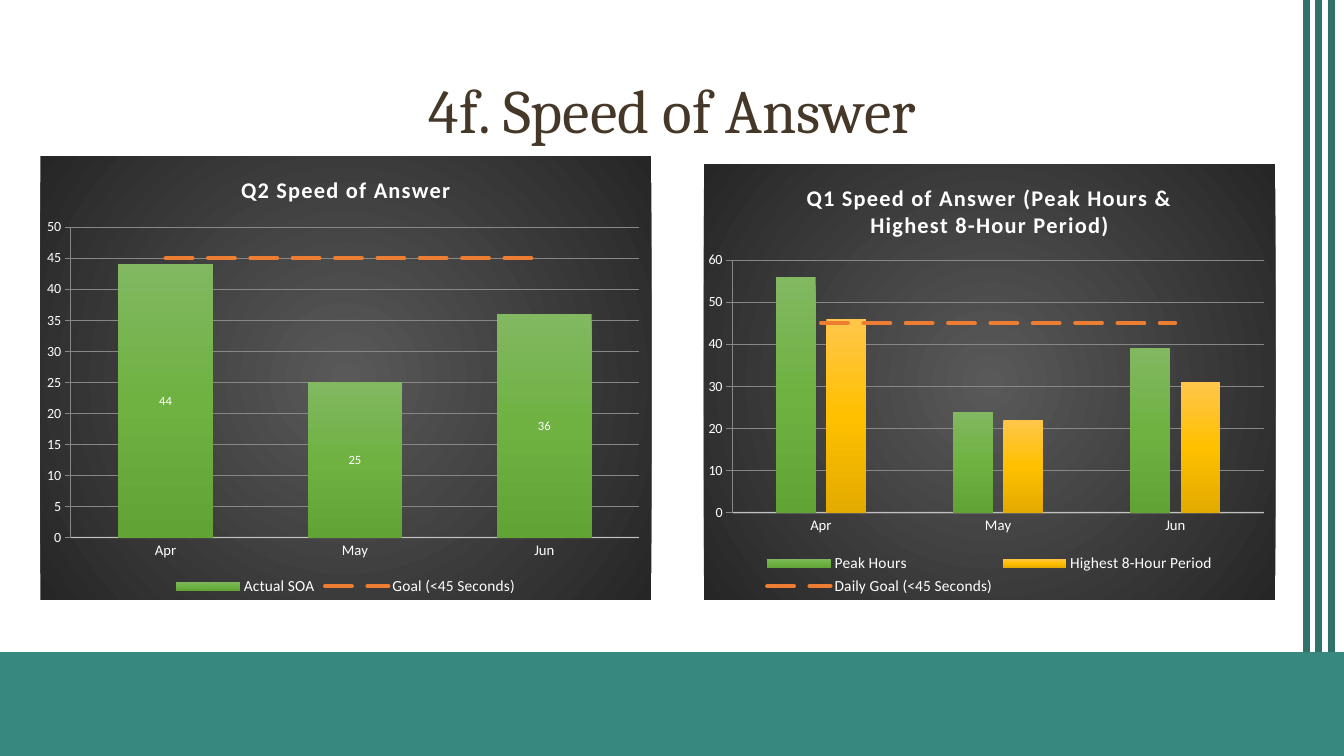
import pptx
import pptx.chart.data
import pptx.dml.color
import pptx.enum.chart
import pptx.enum.dml
import pptx.enum.shapes
import pptx.enum.text
import pptx.oxml
import pptx.oxml.ns
import pptx.util

Inches, Pt, qn = pptx.util.Inches, pptx.util.Pt, pptx.oxml.ns.qn
COLOURS = {"band": "37887F", "stripe": "30716A", "title": "453828", "text": "FFFFFF",
           "axis": "F2F2F2", "goal": "ED7D31"}
GRADIENTS = {"panel": ["595959", "262626"],
             "green": ["81B861", "6FB242", "62A336"],
             "yellow": ["FFC64B", "FFC000", "E3AB00"]}
NS = pptx.oxml.ns.nsdecls("c", "a")
GOAL_AXES = f"""<c:axes {NS}>
<c:catAx><c:axId val="301"/><c:scaling><c:orientation val="minMax"/></c:scaling>
<c:delete val="1"/><c:axPos val="b"/><c:crossAx val="302"/><c:crosses val="autoZero"/></c:catAx>
<c:valAx><c:axId val="302"/><c:scaling><c:orientation val="minMax"/><c:max val="50"/><c:min val="0"/>
</c:scaling><c:delete val="1"/><c:axPos val="r"/><c:crossAx val="301"/><c:crosses val="max"/></c:valAx>
</c:axes>"""


def rgb(name):
    return pptx.dml.color.RGBColor.from_string(COLOURS[name])


def set_all(target, values):
    for key, value in values.items():
        setattr(target, key, value)


def gradient(name, direction):
    colours = GRADIENTS[name]
    stops = "".join(
        f'<a:gs pos="{100000 * i // (len(colours) - 1)}"><a:srgbClr val="{colour}"/></a:gs>'
        for i, colour in enumerate(colours))
    return f"<a:gradFill {NS}><a:gsLst>{stops}</a:gsLst>{direction}</a:gradFill>"


class SpeedSlide:
    linear = '<a:lin ang="5400000" scaled="0"/>'
    radial = ('<a:path path="circle"><a:fillToRect l="50000" t="50000" r="50000" b="50000"/>'
              '</a:path>')

    def __init__(self, deck):
        self.slide = deck.slides.add_slide(deck.slide_layouts[5])

    def font(self, font, size, colour="text", face="Calibri", bold=False):
        set_all(font, {"size": Pt(size), "name": face, "bold": bold})
        font.color.rgb = rgb(colour)

    def line(self, line, colour, width, alpha=None):
        line.color.rgb = rgb(colour)
        line.width = Pt(width)
        if alpha:
            tint = line._ln.find(".//" + qn("a:srgbClr"))
            tint.append(pptx.oxml.parse_xml(f'<a:alpha {NS} val="{alpha * 1000}"/>'))

    def title(self, words, box):
        heading = self.slide.shapes.title
        set_all(heading, dict(zip(("left", "top", "width", "height"), map(Inches, box))))
        frame = heading.text_frame
        frame.text = words
        set_all(frame, {"vertical_anchor": pptx.enum.text.MSO_ANCHOR.MIDDLE, "word_wrap": True})
        set_all(frame.paragraphs[0], {"alignment": pptx.enum.text.PP_ALIGN.CENTER,
                                      "line_spacing": 0.9})
        self.font(frame.paragraphs[0].runs[0].font, 44, "title", "Cambria")

    def band(self, box):
        band = self.slide.shapes.add_shape(
            pptx.enum.shapes.MSO_SHAPE.RECTANGLE, *map(Inches, box))
        band.shadow.inherit = False
        band.fill.solid()
        band.fill.fore_color.rgb = rgb("band")
        band.line.fill.background()

    def stripe(self, x, bottom):
        stripe = self.slide.shapes.add_connector(
            pptx.enum.shapes.MSO_CONNECTOR.STRAIGHT, Inches(x), 0, Inches(x), Inches(bottom))
        self.line(stripe.line, "stripe", 5)
        stripe._element.spPr.append(pptx.oxml.parse_xml(f"<a:effectLst {NS}/>"))

    def chart(self, heading, box, plot_box, bars, goal, gap, overlap=0, labels=False):
        values = pptx.chart.data.CategoryChartData(number_format="0")
        values.categories = ["Apr", "May", "Jun"]
        for name, numbers, _ in bars:
            values.add_series(name, numbers)
        values.add_series(goal, [45] * 3)
        chart = self.slide.shapes.add_chart(
            pptx.enum.chart.XL_CHART_TYPE.COLUMN_CLUSTERED, *map(Inches, box), values).chart
        self.font(chart.font, 10)
        self.panel(chart, plot_box)
        self.goal_line(chart)
        self.axes(chart)

        # Title and legend
        chart.has_title = True
        chart.chart_title.include_in_layout = False
        caption = chart.chart_title.text_frame
        caption.text = heading
        run = caption.paragraphs[0].runs[0]
        self.font(run.font, 16, bold=True)
        run._r.get_or_add_rPr().set("spc", "100")
        chart.has_legend = True
        set_all(chart.legend, {"position": pptx.enum.chart.XL_LEGEND_POSITION.BOTTOM,
                               "include_in_layout": False})
        self.font(chart.legend.font, 11)

        # Bars
        columns = chart.plots[0]
        set_all(columns, {"gap_width": gap, "overlap": overlap, "vary_by_categories": False})
        for series, (_, _, shade) in zip(columns.series, bars):
            series._element.get_or_add_spPr().append(
                pptx.oxml.parse_xml(gradient(shade, self.linear)))
            if labels:
                set_all(series.data_labels, {
                    "show_value": True, "number_format": "0", "number_format_is_linked": False,
                    "position": pptx.enum.chart.XL_LABEL_POSITION.CENTER})
                self.font(series.data_labels.font, 9)

    def panel(self, chart, plot_box):
        space = chart._chartSpace
        space.find(qn("c:chart")).addnext(pptx.oxml.parse_xml(
            f"<c:spPr {NS}>{gradient('panel', self.radial)}<a:ln><a:noFill/></a:ln></c:spPr>"))
        area = space.find(".//" + qn("c:plotArea"))
        for old in area.findall(qn("c:layout")):
            area.remove(old)
        sizes = "".join(f'<c:{k} val="{v}"/>' for k, v in zip("xywh", plot_box))
        area.insert(0, pptx.oxml.parse_xml(
            f'<c:layout {NS}><c:manualLayout><c:layoutTarget val="inner"/><c:xMode val="edge"/>'
            f'<c:yMode val="edge"/>{sizes}</c:manualLayout></c:layout>'))

    def goal_line(self, chart):
        # The last series becomes a line on hidden second axes
        area = chart._chartSpace.find(".//" + qn("c:plotArea"))
        columns = area.find(qn("c:barChart"))
        goal = columns.findall(qn("c:ser"))[-1]
        for flag in goal.findall(qn("c:invertIfNegative")):
            goal.remove(flag)
        lines = pptx.oxml.parse_xml(
            f'<c:lineChart {NS}><c:grouping val="standard"/><c:varyColors val="0"/>'
            '<c:marker val="1"/><c:axId val="301"/><c:axId val="302"/></c:lineChart>')
        lines.insert(2, goal)
        columns.addnext(lines)
        last_axis = area.findall(qn("c:valAx"))[-1]
        for axis in reversed(list(pptx.oxml.parse_xml(GOAL_AXES))):
            last_axis.addnext(axis)
        series = chart.plots[1].series[0]
        series.smooth = False
        series.marker.style = pptx.enum.chart.XL_MARKER_STYLE.NONE
        goal_stroke = series.format.line
        self.line(goal_stroke, "goal", 2.75)
        goal_stroke.dash_style = pptx.enum.dml.MSO_LINE.LONG_DASH
        goal_stroke._ln.set("cap", "rnd")

    def axes(self, chart):
        months, seconds = chart.category_axis, chart.value_axis
        for axis in (months, seconds):
            axis.major_tick_mark = axis.minor_tick_mark = pptx.enum.chart.XL_TICK_MARK.NONE
            self.font(axis.tick_labels.font, 10.5)
        self.line(months.format.line, "axis", 1, 54)
        set_all(seconds, {"minimum_scale": 0, "maximum_scale": 50, "major_unit": 5,
                          "has_major_gridlines": True})
        set_all(seconds.tick_labels, {"number_format": "0", "number_format_is_linked": False})
        seconds.format.line.fill.background()
        self.line(seconds.major_gridlines.format.line, "goal", 0.75, 10)


def main():
    deck = pptx.Presentation()
    set_all(deck, {"slide_width": Inches(13.33), "slide_height": Inches(7.5)})
    page = SpeedSlide(deck)

    # Frame and title
    page.band((0, 6.47, 13.33, 1.03))
    for x in (12.96, 13.08, 13.21):
        page.stripe(x, 6.47)
    page.title("4f. Speed of Answer", (0.92, 0.4, 11.5, 1.45))

    # Charts
    page.chart("Q2 Speed of Answer", (0.4, 1.55, 6.06, 4.4), (0.05, 0.16, 0.93, 0.7),
               [("Actual SOA", (44, 25, 36), "green")], "Goal (<45 Seconds)",
               gap=100, labels=True)
    page.chart("Q1 Speed of Answer (Peak Hours & Highest 8-Hour Period)",
               (6.98, 1.63, 5.67, 4.32), (0.05, 0.22, 0.93, 0.58),
               [("Peak Hours", (56, 24, 39), "green"),
                ("Highest 8-Hour Period", (46, 22, 31), "yellow")],
               "Daily Goal (<45 Seconds)", gap=219, overlap=-27)
    deck.save("out.pptx")


if __name__ == "__main__":
    main()
